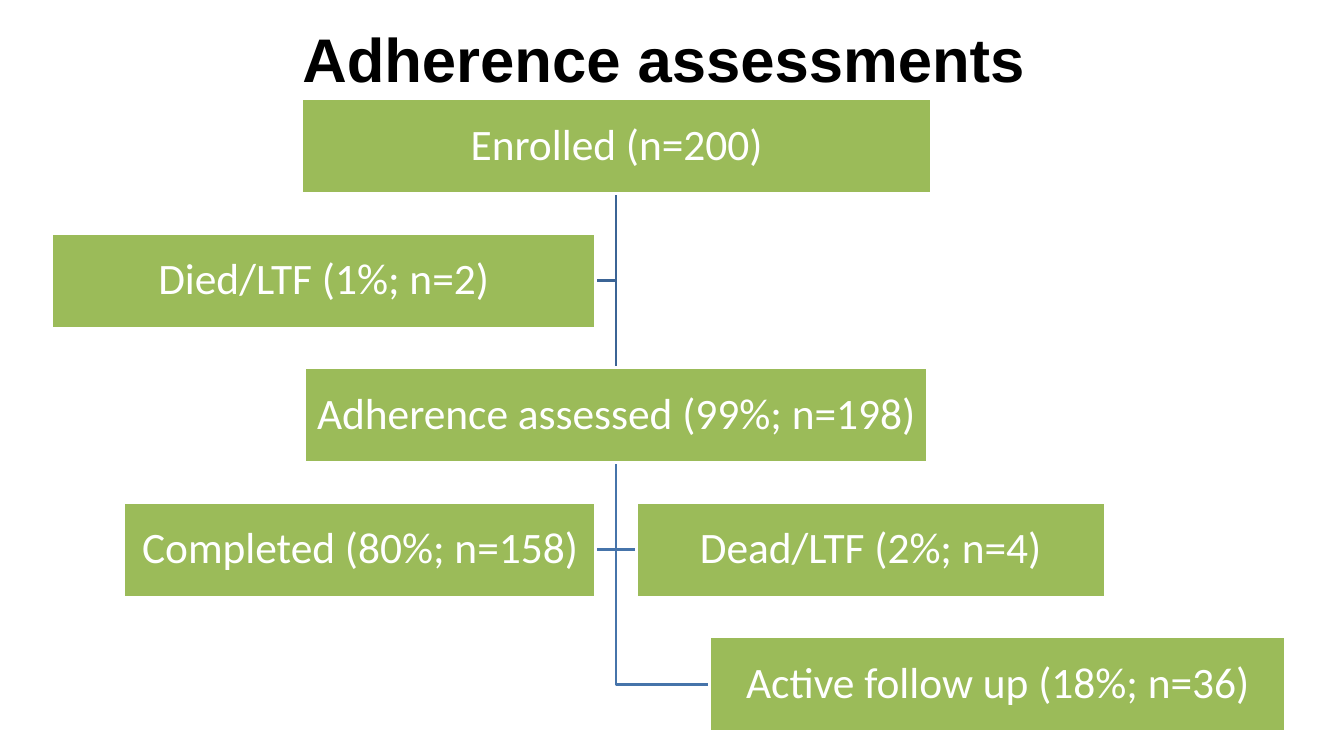
import pptx
import pptx.util
import pptx.dml.color
import pptx.enum.shapes
import pptx.enum.text
from lxml import etree
from pptx.util import Inches

GREEN = pptx.dml.color.RGBColor(0x9B, 0xBB, 0x59)
DARK_BLUE = pptx.dml.color.RGBColor(0x3B, 0x64, 0x95)
BLUE = pptx.dml.color.RGBColor(0x46, 0x74, 0xAA)
WHITE = pptx.dml.color.RGBColor(0xFF, 0xFF, 0xFF)
BLACK = pptx.dml.color.RGBColor(0, 0, 0)

TRUNK_X = 6.11
FIRST_TOP = 0.98
ROW_STEP = 1.335
BOX_HEIGHT = 0.94
LINE_WIDTH = pptx.util.Pt(2)

# text, row, left, width
STAGES = [
    ("Enrolled (n=200)", 0, 2.99, 6.25),
    ("Adherence assessed (99%; n=198)", 2, 3.02, 6.18),
    ("Active follow up (18%; n=36)", 4, 7.04, 5.71),
    ("Completed (80%; n=158)", 3, 1.23, 4.68),
    ("Dead/LTF (2%; n=4)", 3, 6.31, 4.65),
    ("Died/LTF (1%; n=2)", 1, 0.51, 5.4),
]

# parent row, child row, x of the child's near edge, colour
BRANCHES = [
    (0, 1, 5.91, DARK_BLUE),
    (2, 3, 6.31, BLUE),
    (2, 3, 5.91, BLUE),
    (2, 4, 7.04, BLUE),
]


def row_top(row):
    return FIRST_TOP + ROW_STEP * row


def write_text(shape, text, *, size, font, color, bold=False, spacing=1.0,
               margins=(0.1, 0.05)):
    frame = shape.text_frame
    frame.word_wrap = True
    frame.auto_size = pptx.enum.text.MSO_AUTO_SIZE.NONE
    frame.vertical_anchor = pptx.enum.text.MSO_ANCHOR.MIDDLE
    frame.margin_left = frame.margin_right = Inches(margins[0])
    frame.margin_top = frame.margin_bottom = Inches(margins[1])
    paragraph = frame.paragraphs[0]
    paragraph.alignment = pptx.enum.text.PP_ALIGN.CENTER
    paragraph.line_spacing = spacing
    run = paragraph.add_run()
    run.text = text
    run.font.size = pptx.util.Pt(size)
    run.font.name = font
    run.font.bold = bold
    run.font.color.rgb = color


def add_title(slide, text):
    title = slide.shapes.title
    title.left, title.top = Inches(0.67), Inches(-0.05)
    title.width, title.height = Inches(12), Inches(1.25)
    write_text(title, text, size=44, font="Arial", color=BLACK, bold=True)


def add_trunk(slide, parent_row, child_row, color):
    trunk = slide.shapes.add_connector(
        pptx.enum.shapes.MSO_CONNECTOR.STRAIGHT,
        Inches(TRUNK_X), Inches(row_top(parent_row) + BOX_HEIGHT),
        Inches(TRUNK_X), Inches(row_top(child_row)))
    trunk.line.color.rgb = color
    trunk.line.width = LINE_WIDTH
    etree.SubElement(trunk._element.spPr, pptx.oxml.ns.qn("a:effectLst"))


def add_branch(slide, parent_row, child_row, end_x, color):
    start_y = row_top(parent_row) + BOX_HEIGHT
    end_y = row_top(child_row) + BOX_HEIGHT / 2
    builder = slide.shapes.build_freeform(Inches(TRUNK_X), Inches(start_y))
    builder.add_line_segments(
        [(Inches(TRUNK_X), Inches(end_y)), (Inches(end_x), Inches(end_y))],
        close=False)
    branch = builder.convert_to_shape()
    branch.shadow.inherit = False
    branch.fill.background()
    branch.line.color.rgb = color
    branch.line.width = LINE_WIDTH


def add_stage(slide, text, row, left, width):
    stage = slide.shapes.add_shape(
        pptx.enum.shapes.MSO_SHAPE.RECTANGLE, Inches(left),
        Inches(row_top(row)), Inches(width), Inches(BOX_HEIGHT))
    stage.shadow.inherit = False
    stage.fill.solid()
    stage.fill.fore_color.rgb = GREEN
    stage.line.color.rgb = WHITE
    stage.line.width = LINE_WIDTH
    write_text(stage, text, size=31, font="Calibri", color=WHITE,
               spacing=0.9, margins=(0.02, 0.02))


def main():
    deck = pptx.Presentation()
    deck.slide_width, deck.slide_height = Inches(13.33), Inches(7.5)
    slide = deck.slides.add_slide(deck.slide_layouts[5])

    add_title(slide, "Adherence assessments ")

    # Lines go behind the boxes
    for branch in BRANCHES:
        add_branch(slide, *branch)
    add_trunk(slide, 0, 2, DARK_BLUE)

    # Flow of participants
    for stage in STAGES:
        add_stage(slide, *stage)

    deck.save("out.pptx")


if __name__ == "__main__":
    main()
